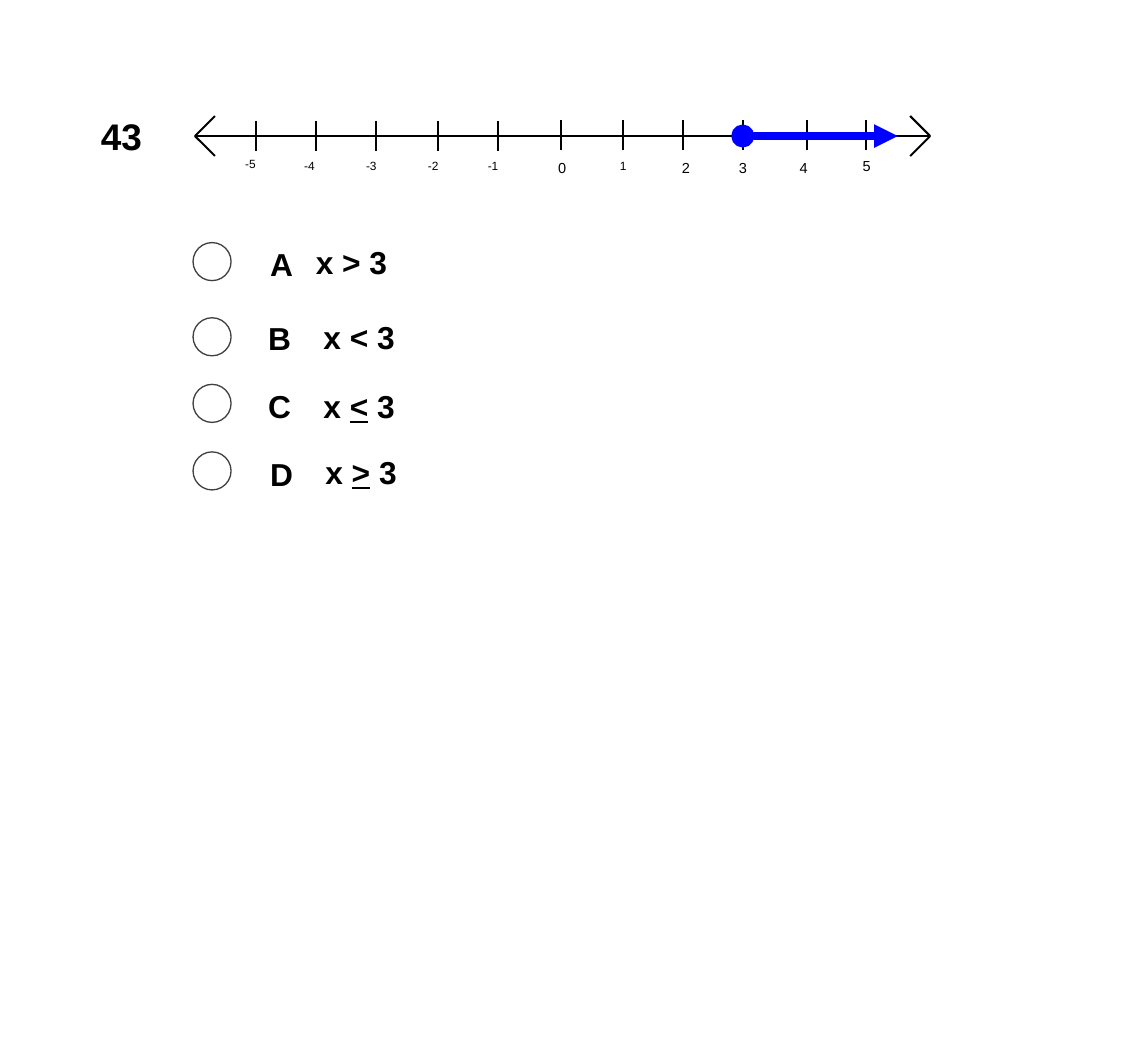
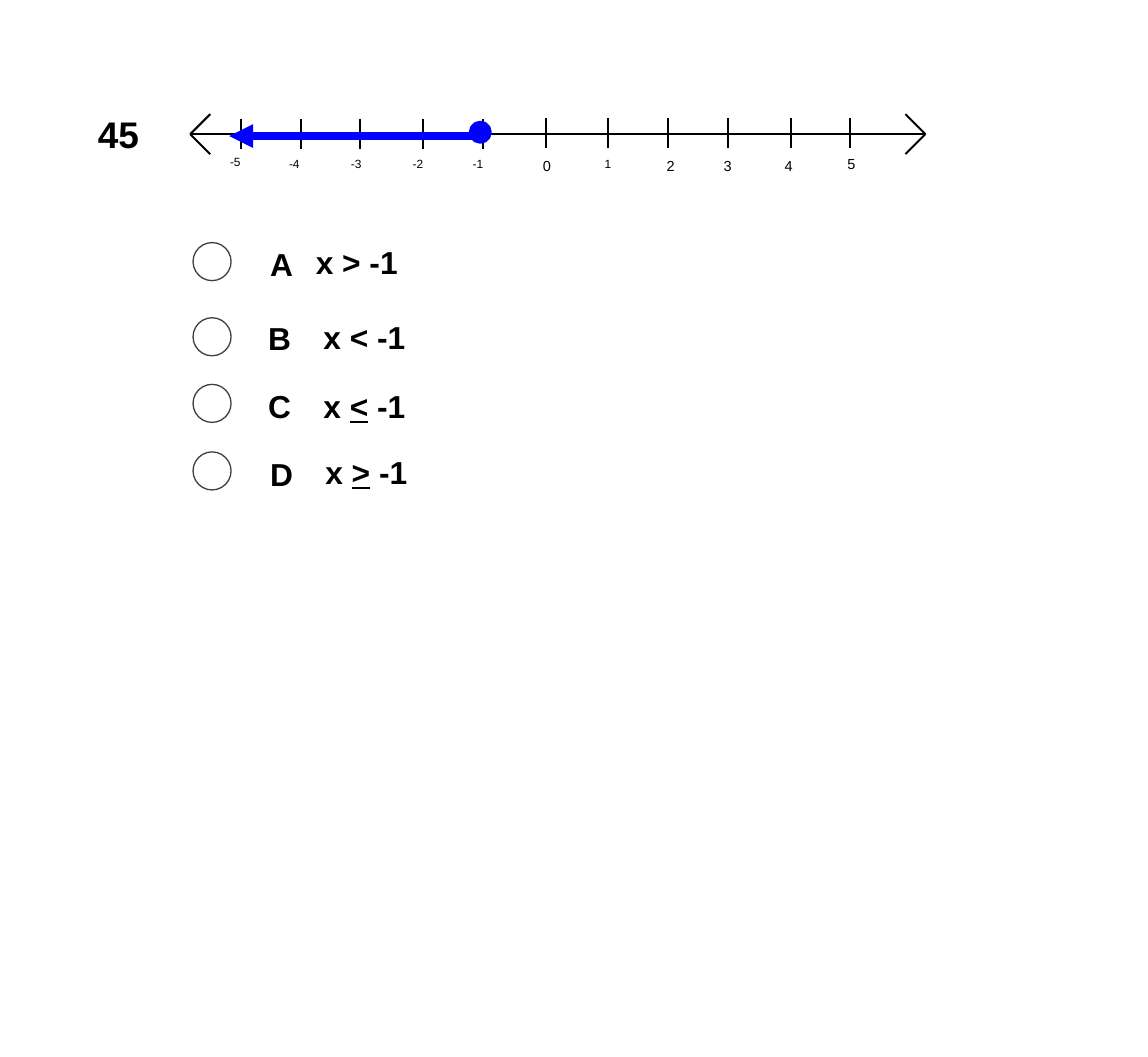
"""Build two multiple-choice slides about inequalities on a number line."""
from lxml import etree
from pptx import Presentation
from pptx.dml.color import RGBColor
from pptx.enum.shapes import MSO_CONNECTOR, MSO_SHAPE
from pptx.enum.text import MSO_AUTO_SIZE
from pptx.oxml.ns import qn
from pptx.util import Inches, Pt

STRAIGHT = MSO_CONNECTOR.STRAIGHT
OVAL = MSO_SHAPE.OVAL
FIT_SHAPE = MSO_AUTO_SIZE.SHAPE_TO_FIT_TEXT
FONT = "Arial"
COLORS = {"ink": "000000", "ray": "0000FF", "paper": "FFFFFF", "ring": "404040"}

QUESTIONS = [
    {"number": "43", "number_left": 0.94, "bound": "3", "axis": (2.05, 1.43),
     "zero": 5.9, "dot": (7.81, 1.43), "ray": (7.89, 9.44)},
    {"number": "45", "number_left": 0.91, "bound": "-1", "axis": (2.0, 1.41),
     "zero": 5.74, "dot": (5.05, 1.39), "ray": (4.99, 2.41)},
]

# Value, tick offset from zero, label offset from zero
TICKS = [
    (-5, -3.21, -3.42), (-4, -2.58, -2.8), (-3, -1.95, -2.15),
    (-2, -1.29, -1.5), (-1, -0.66, -0.87), (0, 0, -0.13),
    (1, 0.65, 0.52), (2, 1.28, 1.17), (3, 1.91, 1.77),
    (4, 2.58, 2.41), (5, 3.2, 3.07),
]

# Letter, relation, underlined, circle top, letter position, expression position
ANSWERS = [
    ("A", ">", False, 2.55, (2.72, 2.51), (3.2, 2.49)),
    ("B", "<", False, 3.34, (2.7, 3.29), (3.28, 3.28)),
    ("C", "<", True, 4.04, (2.7, 4.01), (3.28, 4.01)),
    ("D", ">", True, 4.75, (2.72, 4.72), (3.3, 4.7)),
]

AXIS_LENGTH, BARB, TICK_HEIGHT, RAY_Y = 7.73, 0.21, 0.32, 1.43
SMALL_INSETS, LARGE_INSETS = (0.1, 0.05), (0.12, 0.06)


def color(name):
    return RGBColor.from_string(COLORS[name])


def add_text(slide, position, size, runs, points, bold=True, insets=LARGE_INSETS):
    box = slide.shapes.add_textbox(*map(Inches, position + size))
    frame = box.text_frame
    frame.word_wrap = True
    frame.auto_size = FIT_SHAPE
    frame.margin_left = frame.margin_right = Inches(insets[0])
    frame.margin_top = frame.margin_bottom = Inches(insets[1])
    paragraph = frame.paragraphs[0]
    for text, underlined in runs:
        run = paragraph.add_run()
        run.text = text
        run.font.name = FONT
        run.font.size = Pt(points)
        run.font.bold = bold
        run.font.underline = underlined
        run.font.color.rgb = color("ink")


def add_line(slide, start, end, name="ink", width=1.5, arrow=False):
    connector = slide.shapes.add_connector(STRAIGHT, *map(Inches, start + end))
    connector.line.color.rgb = color(name)
    connector.line.width = Pt(width)
    if arrow:
        etree.SubElement(connector.line._get_or_add_ln(), qn("a:tailEnd"), type="triangle")
    etree.SubElement(connector._element.spPr, qn("a:effectLst"))


def add_circle(slide, left, top, diameter, fill, line, width):
    circle = slide.shapes.add_shape(OVAL, *map(Inches, (left, top, diameter, diameter)))
    circle.shadow.inherit = False
    circle.fill.solid()
    circle.fill.fore_color.rgb = color(fill)
    circle.line.color.rgb = color(line)
    circle.line.width = Pt(width)


def add_number_line(slide, question):
    left, y = question["axis"]
    right = left + AXIS_LENGTH
    add_line(slide, (left, y), (right, y))
    for tip, inward in ((left, BARB), (right, -BARB)):
        for rise in (-BARB, BARB):
            add_line(slide, (tip, y), (tip + inward, y + rise))
    for value, tick_offset, label_offset in TICKS:
        x = question["zero"] + tick_offset
        top = y - (0.16 if value < 0 else 0.17)
        add_line(slide, (x, top), (x, top + TICK_HEIGHT))
        label_top = y + (0.17 if abs(value) == 5 else 0.19)
        points = 9 if value < 0 or value == 1 else 11
        add_text(slide, (question["zero"] + label_offset, label_top), (0.45, 0.27),
                 [(str(value), False)], points, bold=False, insets=SMALL_INSETS)


def add_solution(slide, question):
    diameter = 0.2
    x, y = question["dot"]
    add_circle(slide, x - diameter / 2, y - diameter / 2, diameter, "ray", "ray", 3)
    start, end = question["ray"]
    add_line(slide, (start, RAY_Y), (end, RAY_Y), "ray", 6, arrow=True)


def add_answers(slide, bound):
    for letter, relation, underlined, circle_top, letter_at, expression_at in ANSWERS:
        add_circle(slide, 2.03, circle_top, 0.4, "paper", "ring", 1)
        add_text(slide, letter_at, (0.5, 0.52), [(letter, False)], 24)
        expression = [("x ", False), (relation, underlined), (f" {bound}", False)]
        add_text(slide, expression_at, (2.58, 0.52), expression, 24)


def main():
    presentation = Presentation()
    presentation.slide_width = Inches(12.07)
    presentation.slide_height = Inches(11.11)
    for question in QUESTIONS:
        slide = presentation.slides.add_slide(presentation.slide_layouts[6])
        add_number_line(slide, question)
        add_solution(slide, question)
        add_text(slide, (question["number_left"], question["axis"][1] - 0.3),
                 (1.0, 0.59), [(question["number"], False)], 28)
        add_answers(slide, question["bound"])
    presentation.save("out.pptx")


if __name__ == "__main__":
    main()
